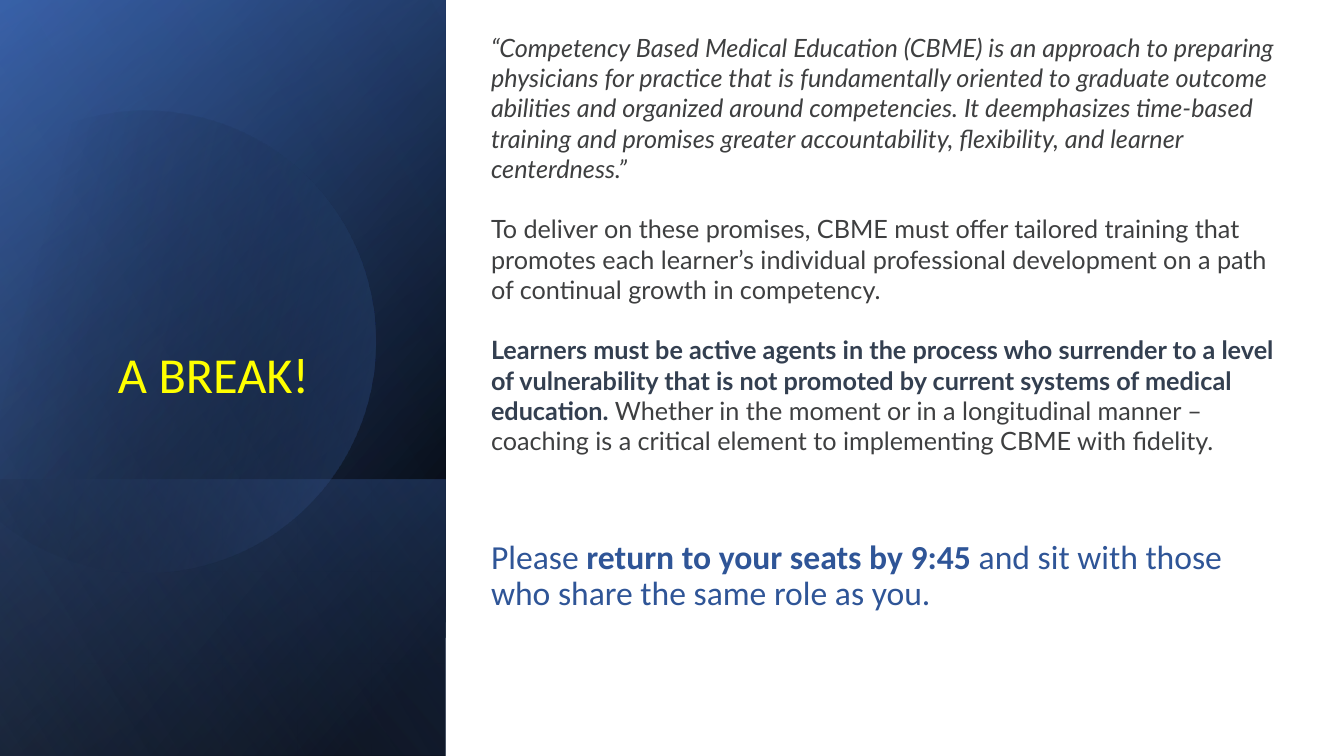
import math
from dataclasses import dataclass
from itertools import pairwise

from pptx import Presentation
from pptx.dml.color import RGBColor
from pptx.enum import shapes, text
from pptx.oxml import ns
from pptx.util import Inches, Pt
from lxml import etree

WHITE = RGBColor(0xFF, 0xFF, 0xFF)
BLACK = RGBColor(0x00, 0x00, 0x00)
NAVY = RGBColor(0x2F, 0x55, 0x97)
BLUE = RGBColor(0x44, 0x72, 0xC4)
PALE_BLUE = RGBColor(0x8F, 0xAA, 0xDC)
YELLOW = RGBColor(0xFF, 0xFF, 0x00)
GREY = RGBColor(0x3E, 0x3F, 0x40)
SLATE = RGBColor(0x33, 0x3F, 0x50)

SLIDE_W, SLIDE_H, PANEL_W = 13.33, 7.5, 4.42


@dataclass(frozen=True)
class Stop:
    position: float
    color: RGBColor
    alpha: int = 100


@dataclass(frozen=True)
class Shade:
    start: Stop
    end: Stop
    angle: float


@dataclass(frozen=True)
class Panel:
    top: float
    shade: Shade


@dataclass(frozen=True)
class Phrase:
    words: str
    color: RGBColor
    bold: bool = False
    italic: bool = False


PANELS = [
    Panel(0, Shade(Stop(0.08, BLACK), Stop(1, NAVY), 50)),
    Panel(0, Shade(Stop(0, BLACK, 0), Stop(0.99, BLUE, 46), 30)),
    Panel(4.76, Shade(Stop(0.02, BLUE, 29), Stop(1, BLACK, 30), 130)),
]
DISC_SHADE = Shade(Stop(0.29, BLACK, 0), Stop(1, BLUE, 43), 30)
SHEEN = Panel(0, Shade(Stop(0, BLACK, 0), Stop(0.99, PALE_BLUE, 11), 120))

CBME_TEXT = [
    [Phrase("“Competency Based Medical Education (CBME) is an approach to preparing "
            "physicians for practice that is fundamentally oriented to graduate outcome "
            "abilities and organized around competencies. It deemphasizes time-based "
            "training and promises greater accountability, flexibility, and learner "
            "centerdness.”", GREY, italic=True)],
    [Phrase("To deliver on these promises, CBME must offer tailored training that "
            "promotes each learner’s individual professional development on a path of "
            "continual growth in competency.", GREY)],
    [Phrase("Learners must be active agents in the process who surrender to a level of "
            "vulnerability that is not promoted by current systems of medical "
            "education. ", SLATE, bold=True),
     Phrase("Whether in the moment or in a longitudinal manner – coaching is a critical "
            "element to implementing CBME with fidelity.", GREY)],
]
RETURN_TEXT = [
    [Phrase("Please ", NAVY),
     Phrase("return to your seats by 9:45 ", NAVY, bold=True),
     Phrase("and sit with those who share the same role as you.", NAVY)],
]


def apply_shade(shape, shade: Shade) -> None:
    shape.shadow.inherit = False
    shape.line.fill.background()
    shape.fill.gradient()
    shape.fill.gradient_angle = 360 - shade.angle
    for target, stop in zip(shape.fill.gradient_stops, (shade.start, shade.end)):
        target.position = stop.position
        target.color.rgb = stop.color
    colors = shape.element.spPr.iter(ns.qn("a:srgbClr"))
    for color, stop in zip(list(colors), (shade.start, shade.end)):
        if stop.alpha < 100:
            etree.SubElement(color, ns.qn("a:alpha")).set("val", str(stop.alpha * 1000))


def add_panel(slide, panel: Panel) -> None:
    length = SLIDE_H - panel.top
    left = (PANEL_W - length) / 2
    top = panel.top + (length - PANEL_W) / 2
    rectangle = slide.shapes.add_shape(
        shapes.MSO_SHAPE.RECTANGLE,
        Inches(left), Inches(top), Inches(length), Inches(PANEL_W))
    rectangle.rotation = 90
    rectangle.element.spPr.find(ns.qn("a:xfrm")).set("flipH", "1")
    apply_shade(rectangle, panel.shade)


def add_disc(slide) -> None:
    center_x, center_y, radius = 1.43, 3.35, 2.29
    angles = [math.radians(degree) for degree in (-118, -90, 0, 90, 150)]

    def rim_point(angle: float, pull: float = 0) -> tuple[int, int]:
        x = center_x + radius * (math.cos(angle) - pull * math.sin(angle))
        y = center_y + radius * (math.sin(angle) + pull * math.cos(angle))
        return Inches(x), Inches(y)

    rim = [rim_point(angle) for angle in angles]
    builder = slide.shapes.build_freeform(*rim[0])
    builder.add_line_segments(rim[1:], close=True)
    disc = builder.convert_to_shape()
    left, top = disc.left, disc.top
    sides = list(disc.element.spPr.iter(ns.qn("a:lnTo")))
    for side, (begin, end) in zip(sides, pairwise(angles)):
        pull = 4 / 3 * math.tan((end - begin) / 4)
        side.tag = ns.qn("a:cubicBezTo")
        controls = (rim_point(begin, pull), rim_point(end, -pull))
        for index, (x, y) in enumerate(controls):
            control = etree.Element(ns.qn("a:pt"), x=str(x - left), y=str(y - top))
            side.insert(index, control)
    disc.rotation = 343.9
    apply_shade(disc, DISC_SHADE)


def place(holder, left: float, top: float, width: float, height: float,
          anchor: text.MSO_ANCHOR, wrap: bool = True) -> None:
    holder.left, holder.top = Inches(left), Inches(top)
    holder.width, holder.height = Inches(width), Inches(height)
    frame = holder.text_frame
    frame.auto_size = text.MSO_AUTO_SIZE.NONE
    frame.word_wrap = wrap
    frame.vertical_anchor = anchor


def write(holder, paragraphs: list[list[Phrase]], font: str, size: float,
          line_spacing: float = 1.0, gap: float = 0) -> None:
    frame = holder.text_frame
    for index, phrases in enumerate(paragraphs):
        paragraph = frame.paragraphs[0] if index == 0 else frame.add_paragraph()
        paragraph.alignment = text.PP_ALIGN.LEFT
        paragraph.line_spacing = line_spacing
        paragraph.space_before = Pt(gap if index else 0)
        paragraph.space_after = Pt(0)
        properties = paragraph._p.get_or_add_pPr()
        properties.set("marL", "0")
        properties.set("indent", "0")
        etree.SubElement(properties, ns.qn("a:buNone"))
        for phrase in phrases:
            run = paragraph.add_run()
            run.text = phrase.words
            run.font.name = font
            run.font.size = Pt(size)
            run.font.bold = phrase.bold
            run.font.italic = phrase.italic
            run.font.color.rgb = phrase.color


def main() -> None:
    deck = Presentation()
    deck.slide_width, deck.slide_height = Inches(SLIDE_W), Inches(SLIDE_H)
    slide = deck.slides.add_slide(deck.slide_layouts[3])
    break_title, cbme, reminder = slide.placeholders

    backdrop = slide.shapes.add_shape(
        shapes.MSO_SHAPE.RECTANGLE, 0, 0, deck.slide_width, deck.slide_height)
    backdrop.shadow.inherit = False
    backdrop.fill.solid()
    backdrop.fill.fore_color.rgb = WHITE
    backdrop.line.fill.background()

    for panel in PANELS:
        add_panel(slide, panel)
    add_disc(slide)
    add_panel(slide, SHEEN)

    place(reminder, 4.77, 0.27, 7.66, 6.51, text.MSO_ANCHOR.BOTTOM)
    reminder.text_frame.margin_bottom = Inches(0.7)
    write(reminder, RETURN_TEXT, "Calibri", 24, line_spacing=0.9)

    place(break_title, 1.07, 3.35, 2.23, 0.71, text.MSO_ANCHOR.TOP, wrap=False)
    write(break_title, [[Phrase("A BREAK!", YELLOW)]], "Calibri", 36)

    place(cbme, 4.77, 0.27, 8.13, 4.34, text.MSO_ANCHOR.TOP)
    write(cbme, CBME_TEXT, "Lato", 18, gap=21.6)

    for holder in (reminder, break_title, cbme):
        slide.shapes.element.append(holder.element)

    deck.save("out.pptx")


if __name__ == "__main__":
    main()
